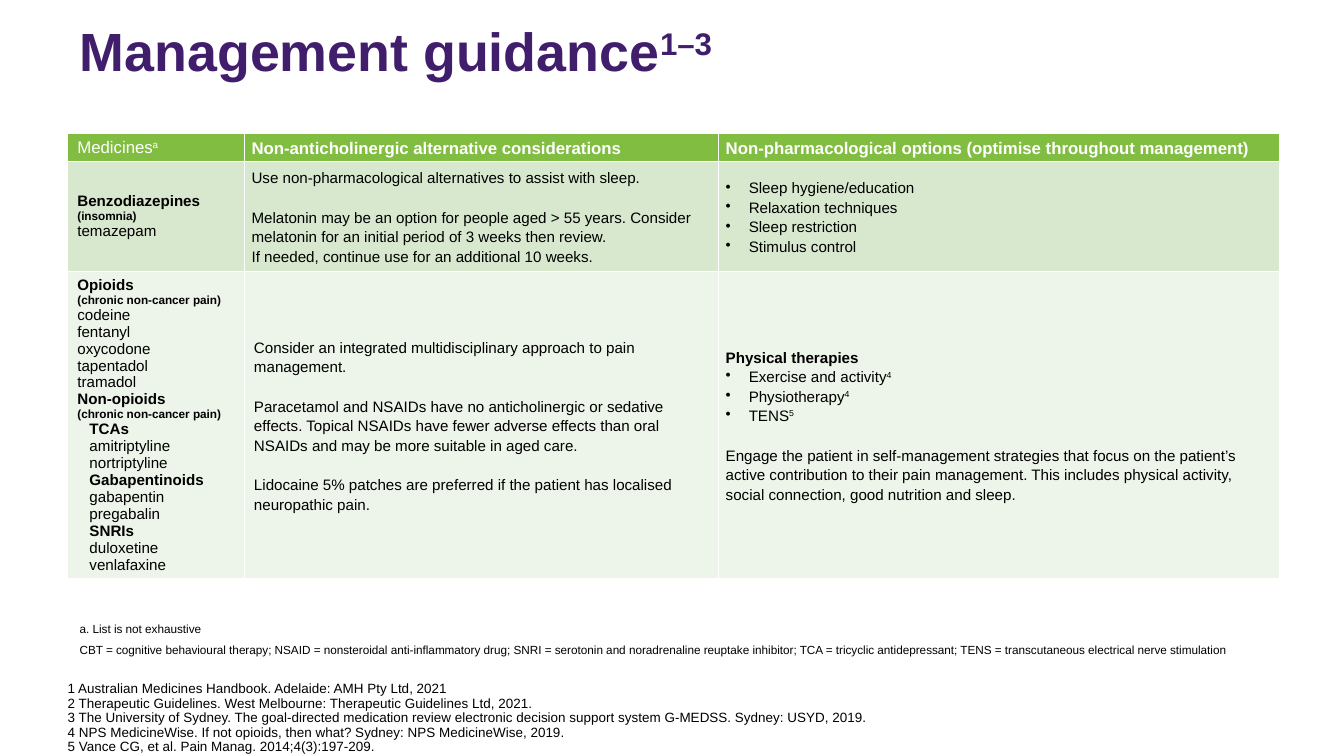
"""Build the management guidance slide with its medicines table."""
import dataclasses

import pptx
import pptx.dml.color
import pptx.enum.text
import pptx.oxml
import pptx.oxml.ns
import pptx.util
from pptx.util import Inches

RGBColor = pptx.dml.color.RGBColor
ANCHOR = pptx.enum.text.MSO_ANCHOR

PURPLE = RGBColor(0x40, 0x1E, 0x6C)
BLACK = RGBColor(0, 0, 0)
WHITE = RGBColor(0xFF, 0xFF, 0xFF)
HEADER_GREEN = RGBColor(0x81, 0xBD, 0x41)
MID_GREEN = RGBColor(0xD8, 0xE8, 0xCF)
PALE_GREEN = RGBColor(0xED, 0xF4, 0xE9)
ROW_FILLS = [HEADER_GREEN, MID_GREEN, PALE_GREEN]


@dataclasses.dataclass
class Style:
    size: float = 9
    bold: bool = False
    color: RGBColor = BLACK
    spacing: float = 1.0
    before: float = 0
    indent: float = 0
    bullet: bool = False


TITLE = Style(32, True, PURPLE, 0.9)
HEAD_PLAIN = Style(10, False, WHITE)
HEAD = Style(10, True, WHITE, 1.15)
GROUP = Style(bold=True)
REASON = Style(7, True)
DRUG = Style()
SUBGROUP = Style(bold=True, indent=0.1)
SUBDRUG = Style(indent=0.1)
ADVICE = Style(spacing=1.15, before=12)
LEAD = Style(bold=True, spacing=1.15)
BULLET = Style(spacing=1.15, indent=0.19, bullet=True)
NOTE = Style(7, spacing=1.15, before=3)
REFERENCE = Style(8, spacing=0.9)


def styled(style, *texts):
    return [(style, text) for text in texts]


ROWS = [
    [
        styled(HEAD_PLAIN, "Medicines^a"),
        styled(HEAD, "Non-anticholinergic alternative considerations"),
        styled(HEAD, "Non-pharmacological options (optimise throughout management)"),
    ],
    [
        [(GROUP, "Benzodiazepines"), (REASON, "(insomnia)"), (DRUG, "temazepam")],
        styled(
            ADVICE,
            "Use non-pharmacological alternatives to assist with sleep.",
            "Melatonin may be an option for people aged > 55 years. Consider melatonin "
            "for an initial period of 3 weeks then review.\v"
            "If needed, continue use for an additional 10 weeks.",
        ),
        styled(BULLET, "Sleep hygiene/education", "Relaxation techniques",
               "Sleep restriction", "Stimulus control"),
    ],
    [
        [
            (GROUP, "Opioids"),
            (REASON, "(chronic non-cancer pain)"),
            *styled(DRUG, "codeine", "fentanyl", "oxycodone", "tapentadol", "tramadol"),
            (GROUP, "Non-opioids"),
            (REASON, "(chronic non-cancer pain)"),
            (SUBGROUP, "TCAs"),
            *styled(SUBDRUG, "amitriptyline", "nortriptyline"),
            (SUBGROUP, "Gabapentinoids"),
            *styled(SUBDRUG, "gabapentin", "pregabalin"),
            (SUBGROUP, "SNRIs"),
            *styled(SUBDRUG, "duloxetine", "venlafaxine"),
        ],
        styled(
            ADVICE,
            "Consider an integrated multidisciplinary approach to pain management.",
            "Paracetamol and NSAIDs have no anticholinergic or sedative effects. Topical "
            "NSAIDs have fewer adverse effects than oral NSAIDs and may be more suitable "
            "in aged care.",
            "Lidocaine 5% patches are preferred if the patient has localised neuropathic pain.",
        ),
        [
            (LEAD, "Physical therapies"),
            *styled(BULLET, "Exercise and activity^4", "Physiotherapy^4", "TENS^5"),
            (ADVICE, "Engage the patient in self-management strategies that focus on the "
                     "patient’s active contribution to their pain management. This includes "
                     "physical activity, social connection, good nutrition and sleep."),
        ],
    ],
]

NOTES = styled(
    NOTE,
    "a. List is not exhaustive",
    "CBT = cognitive behavioural therapy; NSAID = nonsteroidal anti-inflammatory drug; "
    "SNRI = serotonin and noradrenaline reuptake inhibitor; TCA = tricyclic antidepressant; "
    "TENS = transcutaneous electrical nerve stimulation",
)

REFERENCES = styled(
    REFERENCE,
    "1 Australian Medicines Handbook. Adelaide: AMH Pty Ltd, 2021",
    "2 Therapeutic Guidelines. West Melbourne: Therapeutic Guidelines Ltd, 2021.",
    "3 The University of Sydney. The goal-directed medication review electronic decision "
    "support system G-MEDSS. Sydney: USYD, 2019.",
    "4 NPS MedicineWise. If not opioids, then what? Sydney: NPS MedicineWise, 2019.",
    "5 Vance CG, et al. Pain Manag. 2014;4(3):197-209.",
)


def xml_element(body):
    return pptx.oxml.parse_xml(body.replace(" ", f' {pptx.oxml.ns.nsdecls("a")} ', 1))


def format_paragraph(p, style, text, first):
    base, _, superscript = text.partition("^")
    p.text = base
    if superscript:
        r = p.add_run()
        r.text = superscript
        r._r.get_or_add_rPr().set("baseline", "30000")
    pPr = p._p.get_or_add_pPr()
    pPr.set("marL", str(Inches(style.indent)))
    pPr.set("indent", str(-Inches(style.indent) if style.bullet else 0))
    if style.bullet:
        pPr.append(xml_element('<a:buChar char="•"/>'))
    p.alignment = pptx.enum.text.PP_ALIGN.LEFT
    p.line_spacing = style.spacing
    p.space_before = pptx.util.Pt(0 if first else style.before)
    for r in p.runs:
        r.font.name = "Arial"
        r.font.size = pptx.util.Pt(style.size)
        r.font.bold = style.bold
        r.font.color.rgb = style.color


def fill_text(tf, lines):
    for i, (style, text) in enumerate(lines):
        p = tf.add_paragraph() if i else tf.paragraphs[0]
        format_paragraph(p, style, text, i == 0)


def set_margins(target, x, y):
    target.margin_left = target.margin_right = Inches(x)
    target.margin_top = target.margin_bottom = Inches(y)


def add_title(slide):
    sp = slide.shapes.title
    sp.left, sp.top, sp.width, sp.height = map(Inches, (0.56, 0.21, 8.82, 0.99))
    tf = sp.text_frame
    tf.vertical_anchor = ANCHOR.TOP
    tf.auto_size = pptx.enum.text.MSO_AUTO_SIZE.NONE
    set_margins(tf, 0.1, 0)
    fill_text(tf, [(TITLE, "Management guidance^1–3")])


def add_text(slide, box, lines, margins, anchor):
    tf = slide.shapes.add_textbox(*map(Inches, box)).text_frame
    tf.word_wrap = True
    tf.vertical_anchor = anchor
    set_margins(tf, *margins)
    fill_text(tf, lines)


def format_cell(cell, lines, fill, roomy):
    set_margins(cell, *((0.08, 0.04) if roomy else (0.06, 0)))
    cell.vertical_anchor = ANCHOR.MIDDLE
    for side in "LRTB":
        cell._tc.get_or_add_tcPr().append(xml_element(
            f'<a:ln{side} w="12700"><a:solidFill><a:srgbClr val="{WHITE}"/>'
            f'</a:solidFill></a:ln{side}>'))
    cell.fill.solid()
    cell.fill.fore_color.rgb = fill
    fill_text(cell.text_frame, lines)


def add_medicines_table(slide):
    widths, heights = (1.46, 3.92, 4.64), (0.23, 0.91, 2.53)
    table = slide.shapes.add_table(
        len(heights), len(widths), Inches(0.56), Inches(1.1),
        Inches(sum(widths)), Inches(sum(heights))).table
    for column, width in zip(table.columns, widths):
        column.width = Inches(width)
    for i, (row, height) in enumerate(zip(table.rows, heights)):
        row.height = Inches(height)
        for j, lines in enumerate(ROWS[i]):
            format_cell(table.cell(i, j), lines, ROW_FILLS[i], j == 0 or (i, j) == (2, 1))


def main():
    prs = pptx.Presentation()
    prs.slide_width, prs.slide_height = Inches(11.11), Inches(6.25)
    slide = prs.slides.add_slide(prs.slide_layouts[5])
    add_title(slide)
    add_medicines_table(slide)
    add_text(slide, (0.56, 5.07, 10.02, 0.4), NOTES, (0.1, 0.05), ANCHOR.TOP)
    add_text(slide, (0.56, 5.76, 7.97, 0.48), REFERENCES, (0, 0), ANCHOR.BOTTOM)
    prs.save("out.pptx")


if __name__ == "__main__":
    main()
